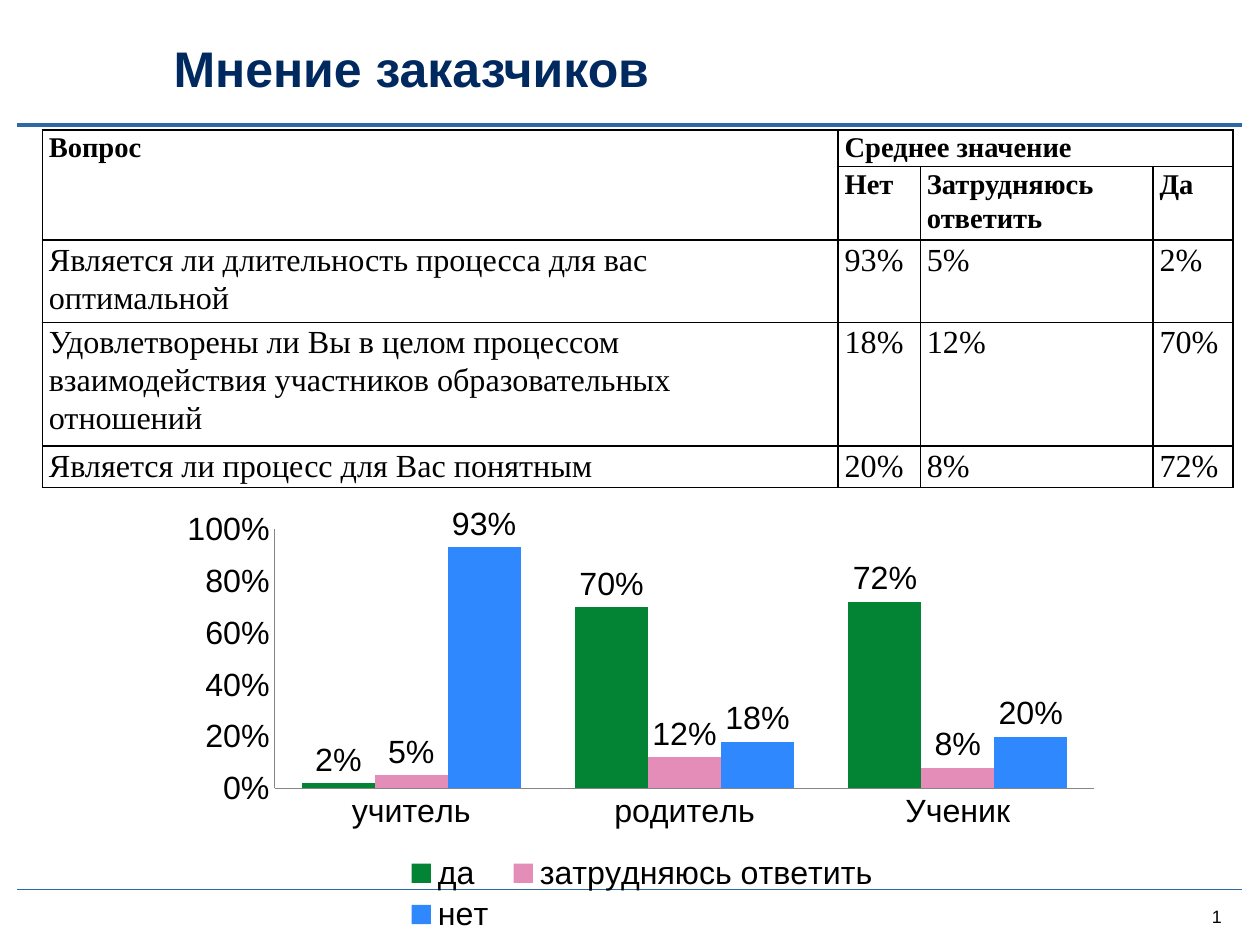
from dataclasses import dataclass

from lxml.etree import SubElement
from pptx import Presentation
from pptx.chart.data import CategoryChartData
from pptx.dml.color import RGBColor
from pptx.enum.chart import (XL_CHART_TYPE, XL_LABEL_POSITION,
                             XL_LEGEND_POSITION, XL_TICK_MARK)
from pptx.enum.shapes import MSO_CONNECTOR
from pptx.enum.text import MSO_ANCHOR, PP_ALIGN
from pptx.oxml import parse_xml
from pptx.oxml.ns import nsdecls, qn
from pptx.util import Inches, Pt

COLUMNS, ROWS = 98, 73.5  # grid of tenths of an inch


@dataclass(frozen=True)
class Theme:
    ink: str = "000000"
    title: str = "002960"
    rule: str = "2E69A5"
    axis: str = "868686"
    yes: str = "028434"
    unsure: str = "E38DB8"
    no: str = "3088FF"
    sans: str = "Arial"
    serif: str = "Times New Roman"
    title_size: int = 28
    body_size: int = 18
    header_size: int = 16
    number_size: int = 10


THEME = Theme()

HEADER = ["Нет", "Затрудняюсь ответить", "Да"]
ANSWERS = [
    ("Является ли длительность процесса для вас оптимальной",
     "93%", "5%", "2%"),
    ("Удовлетворены ли Вы в целом процессом взаимодействия участников "
     "образовательных отношений", "18%", "12%", "70%"),
    ("Является ли процесс для Вас понятным", "20%", "8%", "72%"),
]
RESPONDENTS = ["учитель", "родитель", "Ученик"]
OPINIONS = [
    ("да", (0.02, 0.70, 0.72), THEME.yes),
    ("затрудняюсь ответить", (0.05, 0.12, 0.08), THEME.unsure),
    ("нет", (0.93, 0.18, 0.20), THEME.no),
]


def grid(*units):
    """Turn grid units into lengths."""
    return [Inches(unit / 10) for unit in units]


def rgb(colour):
    return RGBColor.from_string(colour)


def style_font(font, size, colour=THEME.ink, face=THEME.sans, bold=False):
    font.size, font.name, font.bold = Pt(size), face, bold
    font.color.rgb = rgb(colour)


def write(frame, text, align=PP_ALIGN.LEFT, anchor=MSO_ANCHOR.MIDDLE,
          spacing=None, wrap=True, **font_format):
    frame.margin_left = frame.margin_right = 0
    frame.margin_top = frame.margin_bottom = 0
    frame.word_wrap, frame.vertical_anchor = wrap, anchor
    frame.text = text
    paragraph = frame.paragraphs[0]
    paragraph.alignment = align
    if spacing:
        paragraph.line_spacing = spacing
    style_font(paragraph.runs[0].font, **font_format)


def add_rule(slide, row, width):
    left, right, height = grid(1.35, COLUMNS - 1.4, row)
    rule = slide.shapes.add_connector(MSO_CONNECTOR.STRAIGHT,
                                      left, height, right, height)
    rule.line.color.rgb = rgb(THEME.rule)
    rule.line.width = Pt(width)
    SubElement(rule._element.spPr, qn("a:effectLst"))


def border_cell(cell):
    properties = cell._tc.get_or_add_tcPr()
    for position, side in enumerate(("lnL", "lnR", "lnT", "lnB")):
        properties.insert(position, parse_xml(
            f'<a:{side} {nsdecls("a")} w="12700"><a:solidFill>'
            f'<a:srgbClr val="{THEME.ink}"/></a:solidFill></a:{side}>'))


def fill_cell(cell, text, size, bold=False):
    write(cell.text_frame, text, anchor=MSO_ANCHOR.TOP, spacing=1.07,
          size=size, face=THEME.serif, bold=bold)
    cell.vertical_anchor = MSO_ANCHOR.TOP
    cell.margin_left = cell.margin_right = Inches(0.05)
    cell.margin_top = cell.margin_bottom = 0


def add_survey_table(slide):
    widths, heights = (61.9, 6.4, 18.1, 6.2), (2.6, 5.3, 5.9, 8.9, 3)
    table = slide.shapes.add_table(
        len(heights), len(widths),
        *grid(3.3, 10.1, sum(widths), sum(heights))).table
    table.first_row = table.horz_banding = False
    for column, width in zip(table.columns, grid(*widths)):
        column.width = width
    for row, height in zip(table.rows, grid(*heights)):
        row.height = height
    for cell in table.iter_cells():
        cell.fill.background()
        border_cell(cell)
    table.cell(0, 0).merge(table.cell(1, 0))
    table.cell(0, 1).merge(table.cell(0, 3))

    fill_cell(table.cell(0, 0), "Вопрос", THEME.header_size, bold=True)
    fill_cell(table.cell(0, 1), "Среднее значение", THEME.header_size, bold=True)
    for column, answer in enumerate(HEADER, start=1):
        fill_cell(table.cell(1, column), answer, THEME.header_size, bold=True)
    for row, answers in enumerate(ANSWERS, start=2):
        for column, text in enumerate(answers):
            fill_cell(table.cell(row, column), text, THEME.body_size)


def set_layout(part, position, target, x, y, w, h):
    """Place a chart part by shares of the chart's size."""
    for layout in part.findall(qn("c:layout")):
        part.remove(layout)
    inner = f'<c:layoutTarget val="{target}"/>' if target else ""
    shares = "".join(f'<c:{name} val="{share}"/>' for name, share in
                     (("x", x), ("y", y), ("w", w), ("h", h)))
    part.insert(position, parse_xml(
        f'<c:layout {nsdecls("c")}><c:manualLayout>{inner}'
        f'<c:xMode val="edge"/><c:yMode val="edge"/>{shares}'
        '</c:manualLayout></c:layout>'))


def style_axis(axis):
    axis.has_major_gridlines = False
    axis.major_tick_mark = axis.minor_tick_mark = XL_TICK_MARK.NONE
    axis.format.line.color.rgb = rgb(THEME.axis)
    axis.format.line.width = Pt(0.75)


def add_opinion_chart(slide):
    opinions = CategoryChartData(number_format="0%")
    opinions.categories = RESPONDENTS
    for answer, shares, _ in OPINIONS:
        opinions.add_series(answer, shares)
    chart = slide.shapes.add_chart(XL_CHART_TYPE.COLUMN_CLUSTERED,
                                   *grid(13.3, 39.1, 73.3, 34.2), opinions).chart
    chart.has_title = False
    style_font(chart.font, THEME.body_size)
    style_axis(chart.category_axis)
    style_axis(chart.value_axis)
    chart.value_axis.minimum_scale, chart.value_axis.maximum_scale = 0, 1
    chart.value_axis.major_unit = 0.2
    chart.value_axis.tick_labels.number_format = "0%"
    chart.value_axis.tick_labels.number_format_is_linked = False

    plot = chart.plots[0]
    plot.gap_width, plot.overlap, plot.vary_by_categories = 75, 0, False
    for series, (_, _, colour) in zip(plot.series, OPINIONS):
        series.format.fill.solid()
        series.format.fill.fore_color.rgb = rgb(colour)
        labels = series.data_labels
        labels.show_value = True
        labels.number_format, labels.number_format_is_linked = "0%", False
        labels.position = XL_LABEL_POSITION.OUTSIDE_END
        style_font(labels.font, THEME.body_size)

    chart.has_legend = True
    chart.legend.position = XL_LEGEND_POSITION.BOTTOM
    chart.legend.include_in_layout = False
    style_font(chart.legend.font, THEME.body_size)
    plot_area = chart._chartSpace.chart.plotArea
    set_layout(plot_area, 0, "inner", 0.11, 0.06, 0.87, 0.59)
    set_layout(chart.legend._element, 1, None, 0.24, 0.79, 0.52, 0.2)


def main():
    deck = Presentation()
    deck.slide_width, deck.slide_height = grid(COLUMNS, ROWS)
    slide = deck.slides.add_slide(deck.slide_layouts[5])

    add_rule(slide, 69.2, 0.75)
    add_rule(slide, 9.7, 2.25)
    title = slide.shapes.title
    title.left, title.top, title.width, title.height = grid(13.5, 2.9, 73.1, 4.7)
    write(title.text_frame, "Мнение заказчиков", size=THEME.title_size,
          colour=THEME.title, bold=True)
    number = slide.shapes.add_textbox(*grid(93.5, 70.4, 2.3, 1.7))
    write(number.text_frame, "1", wrap=False, align=PP_ALIGN.CENTER,
          size=THEME.number_size)
    add_opinion_chart(slide)
    add_survey_table(slide)
    deck.save("out.pptx")


if __name__ == "__main__":
    main()
